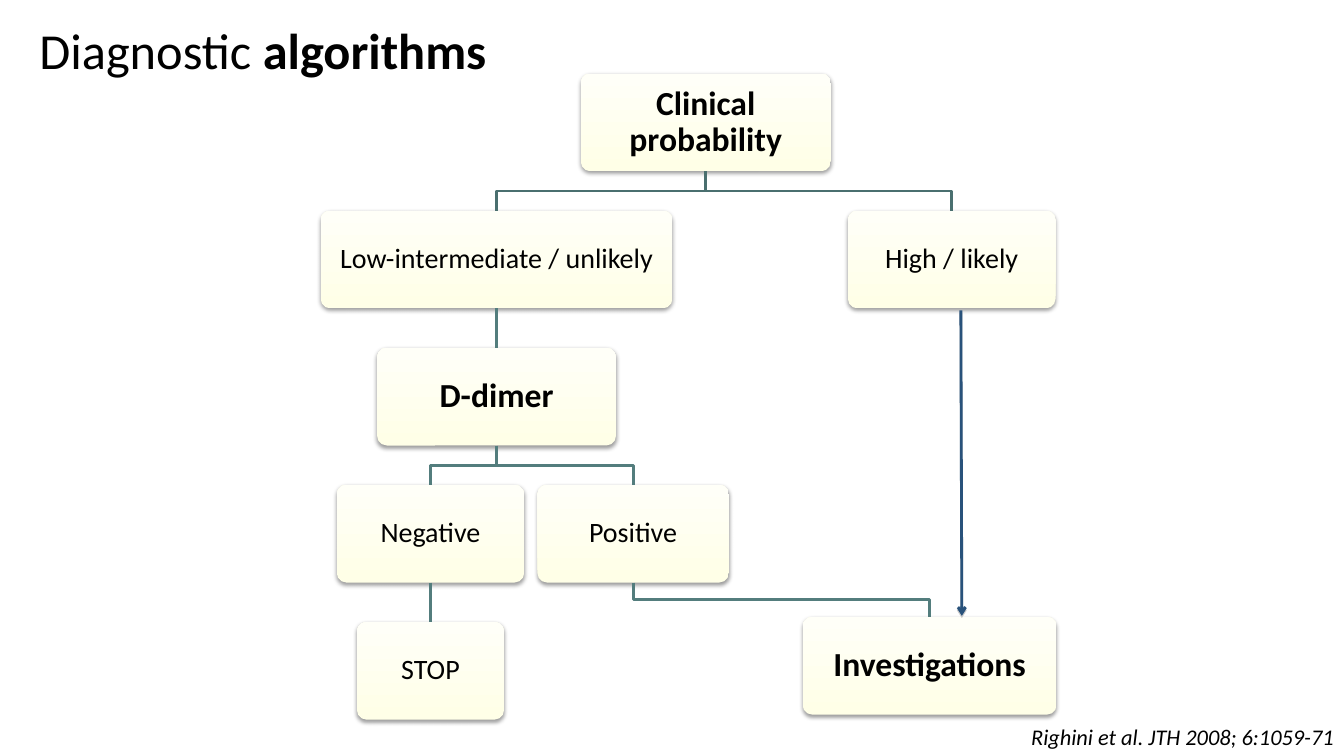
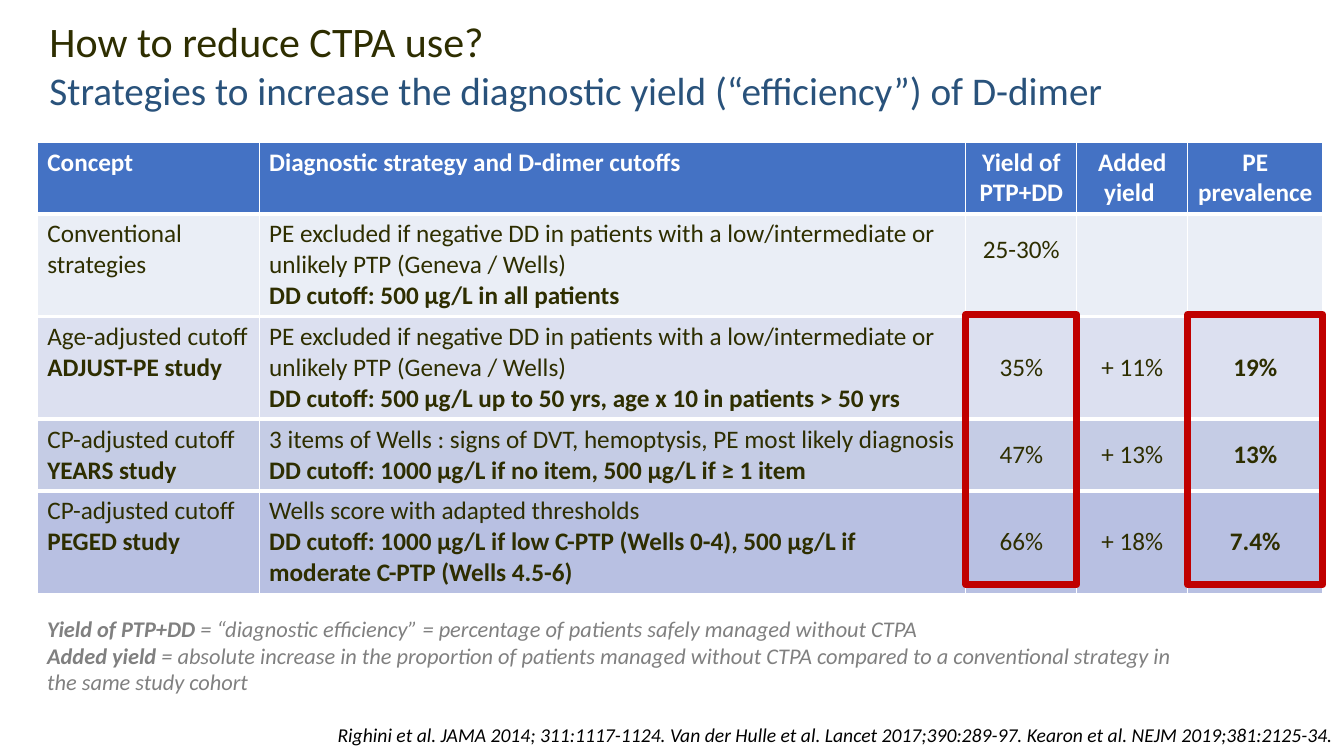
from dataclasses import dataclass

from lxml import etree
from pptx import Presentation
from pptx.dml.color import RGBColor
from pptx.enum.shapes import MSO_CONNECTOR, MSO_SHAPE
from pptx.enum.text import MSO_ANCHOR, MSO_AUTO_SIZE, PP_ALIGN
from pptx.oxml.ns import qn
from pptx.util import Inches, Pt

STRAIGHT = MSO_CONNECTOR.STRAIGHT
ROUND, RECT = MSO_SHAPE.ROUNDED_RECTANGLE, MSO_SHAPE.RECTANGLE
TOP, MIDDLE, BOTTOM = MSO_ANCHOR.TOP, MSO_ANCHOR.MIDDLE, MSO_ANCHOR.BOTTOM
LEFT, CENTER, RIGHT = PP_ALIGN.LEFT, PP_ALIGN.CENTER, PP_ALIGN.RIGHT
FIXED = MSO_AUTO_SIZE.NONE


@dataclass(frozen=True)
class Theme:
    font: str = "Calibri"
    black: str = "000000"
    white: str = "FFFFFF"
    olive: str = "2E2E00"
    navy: str = "29527B"
    grey: str = "808080"
    red: str = "C00000"
    trunk: str = "4A6F6F"
    branch: str = "537D7D"
    cream: tuple = ("FFFFE7", "FFFFF8")
    rows: tuple = ("4472C4", "EAEEF6", "DCE0F0", "C5CCE5", "B8C0E2")
    title: int = 36
    head: int = 30
    sub: int = 28
    key: int = 24
    node: int = 20
    cell: int = 18
    note: int = 16
    cite: int = 14


THEME = Theme()
WIDTH, HEIGHT = 13.33, 7.5

# Name: left, top, width, text, key step
BOXES = {
    "root": (5.76, 0.73, 2.48, "Clinical probability", True),
    "low": (3.18, 2.09, 3.49, "Low-intermediate / unlikely", False),
    "high": (8.41, 2.09, 2.06, "High / likely", False),
    "dimer": (3.74, 3.45, 2.37, "D-dimer", True),
    "neg": (3.34, 4.81, 1.86, "Negative", False),
    "pos": (5.33, 4.81, 1.9, "Positive", False),
    "stop": (3.54, 6.17, 1.46, "STOP", False),
    "tests": (7.96, 6.12, 2.52, "Investigations", True),
}
LINKS = [
    ("root", "low", THEME.trunk),
    ("root", "high", THEME.trunk),
    ("low", "dimer", THEME.branch),
    ("dimer", "neg", THEME.branch),
    ("dimer", "pos", THEME.branch),
    ("neg", "stop", THEME.branch),
    ("pos", "tests", THEME.branch),
]

COLS = (2.2, 7.01, 1.1, 1.1, 1.34)
ROWS = (0.71, 1.02, 1.02, 0.71, 1.02)
RULE = "PE excluded if negative DD in patients with a low/intermediate or unlikely PTP (Geneva / Wells)\n"
CELLS = [
    ("Concept", "Diagnostic strategy and D-dimer cutoffs",
     "Yield of PTP+DD", "Added yield ", "PE prevalence"),
    ("Conventional strategies", RULE + "DD cutoff: 500 μg/L in all patients",
     "25-30%", "", ""),
    ("Age-adjusted cutoff\nADJUST-PE study",
     RULE + "DD cutoff: 500 μg/L up to 50 yrs, age x 10 in patients > 50 yrs",
     "35%", "+ 11%", "19%"),
    ("CP-adjusted cutoff\nYEARS study",
     "3 items of Wells : signs of DVT, hemoptysis, PE most likely diagnosis\n"
     "DD cutoff: 1000 μg/L if no item, 500 μg/L if ≥ 1 item",
     "47%", "+ 13%", "13%"),
    ("CP-adjusted cutoff\nPEGED study",
     "Wells score with adapted thresholds\n"
     "DD cutoff: 1000 μg/L if low C-PTP (Wells 0-4), 500 μg/L if moderate C-PTP (Wells 4.5-6)",
     "66%", "+ 18%", "7.4%"),
]
NOTES = [
    ("Yield of PTP+DD ",
     "= “diagnostic efficiency” = percentage of patients safely managed without CTPA"),
    ("Added yield ",
     "= absolute increase in the proportion of patients managed without CTPA "
     "compared to a conventional strategy in the same study cohort"),
]


def rgb(code):
    return RGBColor.from_string(code)


# Text
def style(run, size, color, bold=False, italic=False):
    font = run.font
    font.name, font.size = THEME.font, Pt(size)
    font.bold, font.italic = bold, italic
    font.color.rgb = rgb(color)


def add_title(prs, box, parts):
    """Add a slide; parts are (text, size, colour, bold)."""
    slide = prs.slides.add_slide(prs.slide_layouts[5])
    title = slide.shapes.title
    title.left, title.top, title.width, title.height = map(Inches, box)
    frame = title.text_frame
    frame.auto_size, frame.vertical_anchor = FIXED, BOTTOM
    para = frame.paragraphs[0]
    para.alignment = LEFT
    for text, size, color, bold in parts:
        if text.startswith("\n"):
            para.add_line_break()
        run = para.add_run()
        run.text = text.strip("\n")
        style(run, size, color, bold)
    return slide


def add_frame(slide, *box):
    frame = slide.shapes.add_textbox(*map(Inches, box)).text_frame
    frame.word_wrap = True
    return frame


def add_cite(slide, text, size):
    frame = add_frame(slide, 3.2, 7.12, WIDTH - 3.2, 0.36)
    frame.text = text
    para = frame.paragraphs[0]
    para.alignment = RIGHT
    style(para.runs[0], size, THEME.black, italic=True)


def add_notes(slide):
    frame = add_frame(slide, 0.37, 6.05, 11.67, 0.91)
    for i, (term, text) in enumerate(NOTES):
        para = frame.add_paragraph() if i else frame.paragraphs[0]
        for part, bold in ((term, True), (text, False)):
            run = para.add_run()
            run.text = part
            style(run, THEME.note, THEME.grey, bold, True)


# Flow chart
def add_shade(shape, color, blur):
    """Call this once fill and line are set."""
    group = etree.SubElement(shape._element.spPr, qn("a:effectLst"))
    shade = etree.SubElement(
        group, qn("a:outerShdw"), blurRad=str(Pt(blur)), dist=str(Pt(1.6)),
        dir="5400000", rotWithShape="0")
    tint = etree.SubElement(shade, qn("a:srgbClr"), val=color)
    etree.SubElement(tint, qn("a:alpha"), val="38000")


def set_line(shape, color, width):
    shape.line.color.rgb = rgb(color)
    shape.line.width = Pt(width)


def add_box(slide, left, top, width, text, key):
    box = slide.shapes.add_shape(ROUND, *map(Inches, (left, top, width, 0.97)))
    box.adjustments[0] = 0.1
    box.fill.gradient()
    box.fill.gradient_angle = 90
    for stop, color in zip(box.fill.gradient_stops, THEME.cream):
        stop.color.rgb = rgb(color)
    box.line.fill.background()
    add_shade(box, THEME.black, 3.1)
    frame = box.text_frame
    frame.word_wrap, frame.vertical_anchor = True, MIDDLE
    frame.margin_left = frame.margin_right = Inches(0.1 if key else 0.08)
    frame.text = text
    para = frame.paragraphs[0]
    para.alignment, para.line_spacing = CENTER, 0.9
    style(para.runs[0], THEME.key if key else THEME.node, THEME.black, key)
    return box


def add_line(slide, start, end):
    line = slide.shapes.add_connector(STRAIGHT, *start, *end)
    return line


def add_link(slide, above, below, color):
    x1, y1 = above.left + above.width // 2, above.top + above.height
    x2, y2 = below.left + below.width // 2, below.top
    if abs(x1 - x2) < Inches(0.02):
        link = add_line(slide, (x1, y1), (x1, y2))
        set_line(link, color, 2)
        etree.SubElement(link._element.spPr, qn("a:effectLst"))
        return
    mid = (y1 + y2) // 2
    path = slide.shapes.build_freeform(x1, y1)
    path.add_line_segments([(x1, mid), (x2, mid), (x2, y2)], close=False)
    link = path.convert_to_shape()
    link.fill.background()
    set_line(link, color, 2)
    link.shadow.inherit = False


def add_arrow(slide, start, end):
    arrow = add_line(slide, map(Inches, start), map(Inches, end))
    set_line(arrow, THEME.navy, 2)
    etree.SubElement(arrow.line._get_or_add_ln(), qn("a:tailEnd"), type="arrow")
    add_shade(arrow, THEME.grey, 0)


# Table
def set_edges(cell, row):
    top = 3 if row else 1
    base = 1 if row == len(ROWS) - 1 else 3
    props = cell._tc.get_or_add_tcPr()
    edges = (("lnL", 1), ("lnR", 1), ("lnT", top), ("lnB", base))
    for i, (tag, width) in enumerate(edges):
        edge = etree.Element(qn("a:" + tag), w=str(Pt(width)))
        fill = etree.SubElement(edge, qn("a:solidFill"))
        etree.SubElement(fill, qn("a:srgbClr"), val=THEME.white)
        props.insert(i, edge)


def fill_cell(cell, row, col, text):
    cell.fill.solid()
    cell.fill.fore_color.rgb = rgb(THEME.rows[row])
    set_edges(cell, row)
    cell.vertical_anchor = MIDDLE if row and col > 1 else TOP
    cell.text_frame.text = text
    for i, para in enumerate(cell.text_frame.paragraphs):
        para.alignment = CENTER if col > 1 else LEFT
        for run in para.runs:
            bold = row == 0 or i > 0 or col == 4
            style(run, THEME.cell, THEME.olive if row else THEME.white, bold)


def add_grid(slide, left, top):
    box = map(Inches, (left, top, sum(COLS), sum(ROWS)))
    table = slide.shapes.add_table(len(ROWS), len(COLS), *box).table
    for col, width in zip(table.columns, COLS):
        col.width = Inches(width)
    for r, texts in enumerate(CELLS):
        table.rows[r].height = Inches(ROWS[r])
        for c, text in enumerate(texts):
            fill_cell(table.cell(r, c), r, c, text)
    table.cell(1, 2).margin_bottom = Inches(0.35)


def add_mark(slide, left, col):
    x = left + sum(COLS[:col])
    mark = slide.shapes.add_shape(
        RECT, *map(Inches, (x, 3.12, COLS[col], 2.68)))
    mark.fill.background()
    set_line(mark, THEME.red, 5)
    mark.shadow.inherit = False


# Slides
def add_flow(prs):
    slide = add_title(prs, (0.29, 0.08, 5.2, 0.76), [
        ("Diagnostic ", THEME.title, THEME.black, False),
        ("algorithms", THEME.title, THEME.black, True)])
    boxes = {name: add_box(slide, *data) for name, data in BOXES.items()}
    for above, below, color in LINKS:
        add_link(slide, boxes[above], boxes[below], color)
    add_arrow(slide, (9.53, 3.08), (9.54, 6.11))
    add_cite(slide, "Righini et al. JTH 2008; 6:1059-71", THEME.note)


def add_yield(prs):
    slide = add_title(prs, (0.39, 0.1, 12.13, 1.07), [
        ("How to reduce CTPA use?", THEME.head, THEME.olive, False),
        ("\nStrategies to increase the diagnostic yield (“efficiency”) of D-dimer",
         THEME.sub, THEME.navy, False)])
    left = 0.37
    add_grid(slide, left, 1.41)
    add_notes(slide)
    add_cite(slide, "Righini et al. JAMA 2014; 311:1117-1124. Van der Hulle et al. "
             "Lancet 2017;390:289-97. Kearon et al. NEJM 2019;381:2125-34.", THEME.cite)
    for col in (2, 4):
        add_mark(slide, left, col)


def main():
    prs = Presentation()
    prs.slide_width, prs.slide_height = Inches(WIDTH), Inches(HEIGHT)
    add_flow(prs)
    add_yield(prs)
    prs.save("out.pptx")


if __name__ == "__main__":
    main()
